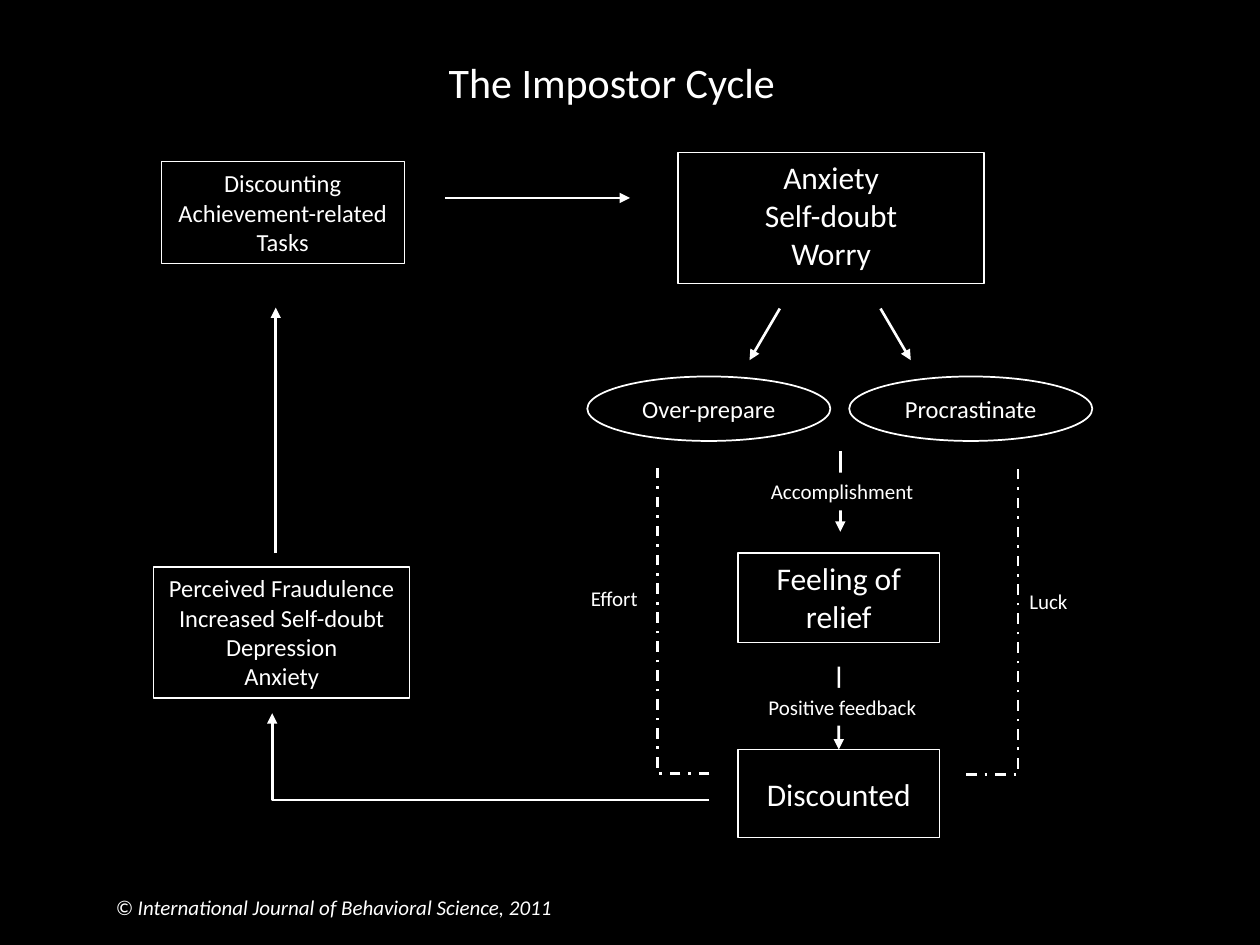
from pptx import Presentation
from pptx.dml.color import RGBColor
from pptx.enum.dml import MSO_LINE
from pptx.enum.shapes import MSO_CONNECTOR, MSO_SHAPE
from pptx.enum.text import MSO_ANCHOR, PP_ALIGN
from pptx.oxml.ns import qn
from pptx.util import Cm, Pt
from lxml.etree import SubElement

INK = {"back": "000000", "line": "FFFFFF", "text": "FFFFFF"}
FONT = "Calibri"
TOP, MID = MSO_ANCHOR.TOP, MSO_ANCHOR.MIDDLE
LEFT, CENTER = PP_ALIGN.LEFT, PP_ALIGN.CENTER

TITLE = ("The Impostor Cycle", 8.79, 1.02, 7.26, 1.27)
BOXES = [
    ("Discounting\nAchievement-related\nTasks", 3.25, 3.25, 4.9, 2.06, 14, MID, False),
    ("Anxiety\vSelf-doubt\vWorry", 13.67, 3.07, 6.17, 2.64, 18, TOP, True),
    ("Feeling of relief", 14.88, 11.15, 4.06, 1.8, 18, TOP, True),
    ("Perceived Fraudulence\nIncreased Self-doubt\nDepression\nAnxiety",
     3.1, 11.43, 5.16, 2.64, 14, TOP, False),
    ("Discounted", 14.88, 15.11, 4.06, 1.78, 18, MID, True),
]
OVALS = [("Over-prepare", 11.84), ("Procrastinate", 17.12)]
ARROWS = [
    (8.97, 3.99, 12.7, 3.99),
    (5.56, 11.15, 5.56, 6.2),
    (15.72, 6.22, 15.11, 7.26),
    (17.75, 6.22, 18.36, 7.26),
    (16.94, 9.09, 16.94, 10.72),
]
FEED = (16.91, 13.44, 16.91, 15.11)
BENDS = [
    (14.3, 15.6, 13.26, 9.37, True),
    (19.48, 15.62, 20.52, 9.37, True),
    (14.3, 16.13, 5.49, 14.38, False),
]
STEPS = [("Accomplishment", 15.29, 9.53), ("Positive feedback", 15.24, 13.87)]
NOTES = [
    ("Effort", 11.66, 11.68, 1.55, False),
    ("Luck", 20.5, 11.73, 1.35, False),
    ("© International Journal of Behavioral Science, 2011", 2.08, 17.91, 9.45, True),
]


def color(name):
    return RGBColor.from_string(INK[name])


def write(shape, text, size, align=LEFT, anchor=TOP, wrap=True, slant=False):
    frame = shape.text_frame
    frame.text = text
    frame.word_wrap = wrap
    frame.vertical_anchor = anchor
    for para in frame.paragraphs:
        para.alignment = align
        for run in para.runs:
            font = run.font
            font.name, font.size, font.italic = FONT, Pt(size), slant
            font.color.rgb = color("text")


def node(kind, x, y, w, h, width):
    shape = shapes.add_shape(kind, Cm(x), Cm(y), Cm(w), Cm(h))
    shape.shadow.inherit = False
    shape.fill.background()
    if width:
        shape.line.color.rgb = color("line")
        shape.line.width = Pt(width)
    else:
        shape.line.fill.background()
    return shape


def link(kind, ends, dash=False):
    wire = shapes.add_connector(kind, *map(Cm, ends))
    wire.line.color.rgb = color("line")
    wire.line.width = Pt(1.5)
    if dash:
        wire.line.dash_style = MSO_LINE.DASH_DOT
    else:
        SubElement(wire.line._get_or_add_ln(), qn("a:tailEnd"), type="triangle")
    SubElement(wire._element.spPr, qn("a:effectLst"))
    return wire


deck = Presentation()
deck.slide_width, deck.slide_height = Cm(25.4), Cm(19.05)
slide = deck.slides.add_slide(deck.slide_layouts[5])
slide.background.fill.solid()
slide.background.fill.fore_color.rgb = color("back")
shapes = slide.shapes

text, *place = TITLE
title = shapes.title
title.left, title.top, title.width, title.height = map(Cm, place)
write(title, text, 24, wrap=False)

for text, x, y, w, h, size, anchor, wrap in BOXES:
    box = node(MSO_SHAPE.RECTANGLE, x, y, w, h, 0.75)
    write(box, text, size, CENTER, anchor, wrap)

for text, x in OVALS:
    oval = node(MSO_SHAPE.OVAL, x, 7.59, 4.9, 1.3, 1)
    write(oval, text, 14, CENTER, MID)

for ends in ARROWS:
    link(MSO_CONNECTOR.STRAIGHT, ends)
link(MSO_CONNECTOR.STRAIGHT, FEED).end_connect(box, 0)

for *ends, dash in BENDS:
    bend = link(MSO_CONNECTOR.ELBOW, ends, dash)
    bend._element.spPr.find(qn("a:prstGeom")).set("prst", "bentConnector2")

for text, x, y in STEPS:
    step = node(MSO_SHAPE.RECTANGLE, x, y, 3.66, 0.76, 0)
    step.fill.solid()
    step.fill.fore_color.rgb = color("back")
    write(step, text, 12)

for text, x, y, w, slant in NOTES:
    note = shapes.add_textbox(Cm(x), Cm(y), Cm(w), Cm(0.76))
    write(note, text, 12, wrap=False, slant=slant)

deck.save("out.pptx")
